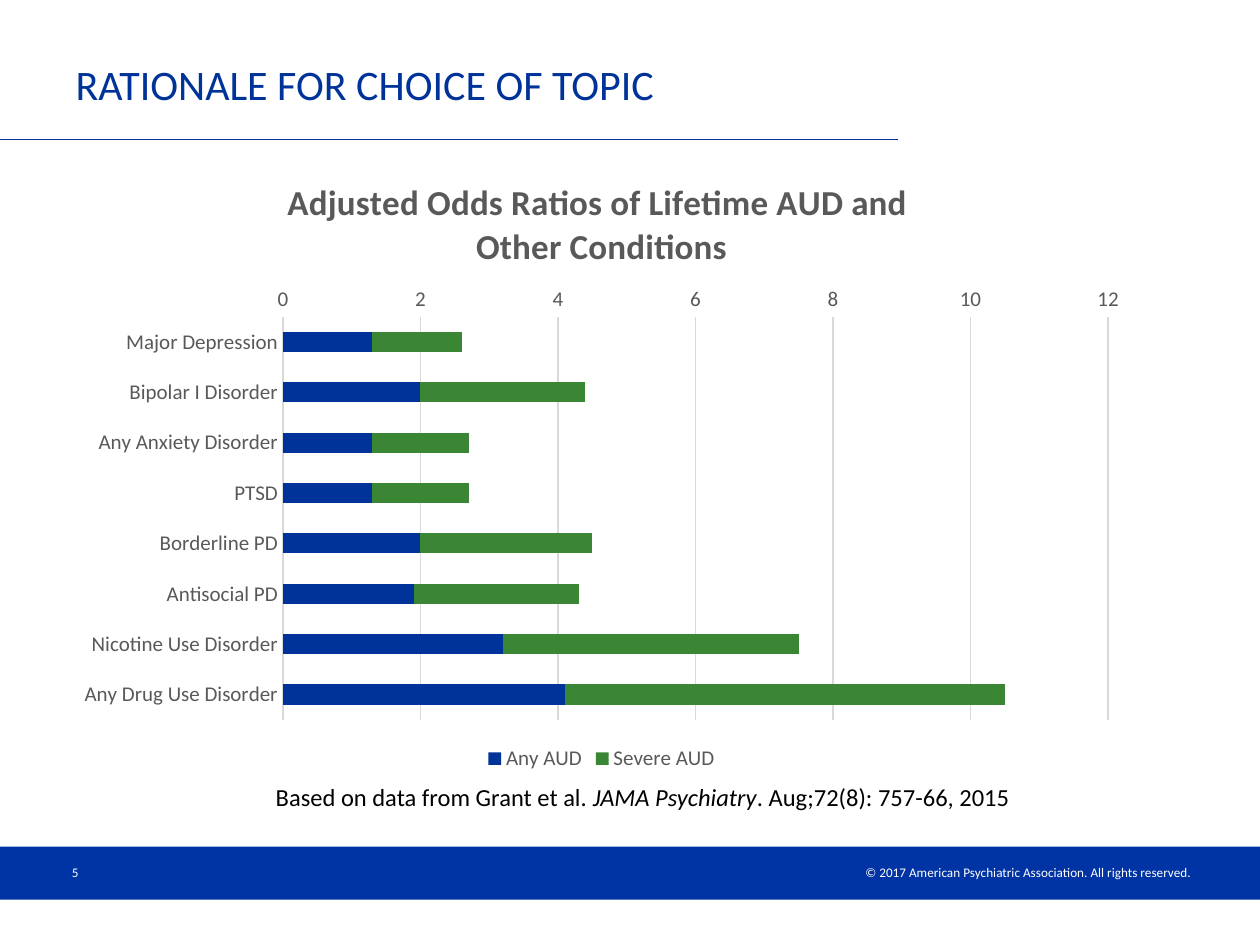
import pptx
import pptx.chart.data
import pptx.dml.color
import pptx.enum.chart
import pptx.enum.shapes
import pptx.enum.text
import pptx.oxml.ns
import pptx.util
import lxml.etree

Inches = pptx.util.Inches
Pt = pptx.util.Pt
RGBColor = pptx.dml.color.RGBColor
Align = pptx.enum.text.PP_ALIGN
Anchor = pptx.enum.text.MSO_ANCHOR

NAVY = RGBColor(0x00, 0x33, 0x99)
BAND_BLUE = RGBColor(0x00, 0x33, 0xA3)
GREEN = RGBColor(0x3B, 0x86, 0x34)
GRAY = RGBColor(0x59, 0x59, 0x59)
GRID_GRAY = RGBColor(0xD9, 0xD9, 0xD9)
BLACK = RGBColor(0, 0, 0)
WHITE = RGBColor(255, 255, 255)
FONT = "Calibri"

ODDS_RATIOS = {
    "Major Depression": (1.3, 1.3),
    "Bipolar I Disorder": (2, 2.4),
    "Any Anxiety Disorder": (1.3, 1.4),
    "PTSD": (1.3, 1.4),
    "Borderline PD": (2, 2.5),
    "Antisocial PD": (1.9, 2.4),
    "Nicotine Use Disorder": (3.2, 4.3),
    "Any Drug Use Disorder": (4.1, 6.4),
}
SEVERITIES = {"Any AUD": NAVY, "Severe AUD": GREEN}


class SlideBuilder:
    def __init__(self, slide):
        self.slide = slide

    def style(self, font, size, color, bold=None, italic=None):
        font.name = FONT
        font.size = Pt(size)
        font.color.rgb = color
        font.bold = bold
        font.italic = italic

    def box(self, left, top, width, height):
        return Inches(left), Inches(top), Inches(width), Inches(height)

    def title(self, text, *place):
        heading = self.slide.shapes.title
        heading.left, heading.top, heading.width, heading.height = self.box(*place)
        frame = heading.text_frame
        frame.text = text
        frame.vertical_anchor = Anchor.MIDDLE
        frame.paragraphs[0].alignment = Align.LEFT
        self.style(frame.paragraphs[0].runs[0].font, 24, NAVY)

    def band(self, color, *place):
        bar = self.slide.shapes.add_shape(
            pptx.enum.shapes.MSO_SHAPE.RECTANGLE, *self.box(*place))
        bar.shadow.inherit = False
        bar.fill.solid()
        bar.fill.fore_color.rgb = color
        bar.line.fill.background()

    def rule(self, left, right, top):
        line = self.slide.shapes.add_connector(
            pptx.enum.shapes.MSO_CONNECTOR.STRAIGHT,
            Inches(left), Inches(top), Inches(right), Inches(top))
        line.line.color.rgb = NAVY
        line.line.width = Pt(0.75)
        properties = line._element.spPr
        lxml.etree.SubElement(properties, pptx.oxml.ns.qn("a:effectLst"))

    def text(self, parts, size, color, *place, align=Align.LEFT,
             anchor=Anchor.MIDDLE, wrap=True):
        """Add one paragraph from (text, italic) parts."""
        frame = self.slide.shapes.add_textbox(*self.box(*place)).text_frame
        frame.word_wrap = wrap
        frame.vertical_anchor = anchor
        paragraph = frame.paragraphs[0]
        paragraph.alignment = align
        for words, italic in parts:
            run = paragraph.add_run()
            run.text = words
            self.style(run.font, size, color, italic=italic)
        return frame

    def stacked_bars(self, title, rows, series_colors, *place):
        data = pptx.chart.data.CategoryChartData()
        data.categories = list(rows)
        for name, values in zip(series_colors, zip(*rows.values())):
            data.add_series(name, values)
        chart = self.slide.shapes.add_chart(
            pptx.enum.chart.XL_CHART_TYPE.BAR_STACKED, *self.box(*place), data).chart
        self.style(chart.font, 10, BLACK)

        chart.has_title = True
        chart.chart_title.include_in_layout = False
        chart.chart_title.text_frame.text = title
        for paragraph in chart.chart_title.text_frame.paragraphs:
            self.style(paragraph.runs[0].font, 20, GRAY, bold=True)

        chart.has_legend = True
        chart.legend.position = pptx.enum.chart.XL_LEGEND_POSITION.BOTTOM
        chart.legend.include_in_layout = False
        self.style(chart.legend.font, 12, GRAY)

        for axis in (chart.category_axis, chart.value_axis):
            axis.major_tick_mark = pptx.enum.chart.XL_TICK_MARK.NONE
            axis.minor_tick_mark = pptx.enum.chart.XL_TICK_MARK.NONE
            self.style(axis.tick_labels.font, 12, GRAY)
        chart.category_axis.reverse_order = True
        chart.value_axis.format.line.fill.background()
        chart.value_axis.has_major_gridlines = True
        for line in (chart.category_axis.format.line,
                     chart.value_axis.major_gridlines.format.line):
            line.color.rgb = GRID_GRAY
            line.width = Pt(0.75)

        plot = chart.plots[0]
        plot.gap_width = 150
        plot.overlap = 100
        plot.vary_by_categories = False
        for series, color in zip(plot.series, series_colors.values()):
            series.format.fill.solid()
            series.format.fill.fore_color.rgb = color


def main():
    deck = pptx.Presentation()
    deck.slide_width = Inches(10)
    deck.slide_height = Inches(7.5)
    builder = SlideBuilder(deck.slides.add_slide(deck.slide_layouts[5]))

    builder.band(BAND_BLUE, 0, 6.72, 10, 0.42)
    builder.rule(0, 7.13, 1.11)
    builder.text([("© 2017 American Psychiatric Association. All rights reserved.", None)],
                 7.5, WHITE, 5.18, 6.81, 4.37, 0.23, align=Align.RIGHT)
    page_number = builder.text([("5", None)], 7.5, WHITE, 0.5, 6.72, 2.33, 0.4)
    page_number.margin_left = page_number.margin_right = Inches(0.07)
    page_number.margin_top = page_number.margin_bottom = Inches(0.04)

    builder.title("RATIONALE FOR CHOICE OF TOPIC", 0.5, 0.34, 6.63, 0.64)
    builder.stacked_bars(
        "Adjusted Odds Ratios of Lifetime AUD and \nOther Conditions",
        ODDS_RATIOS, SEVERITIES, 0.5, 1.24, 8.55, 4.92)
    builder.text([("Based on data from Grant et al. ", None),
                  ("JAMA Psychiatry", True),
                  (". Aug;72(8): 757-66, 2015", False)],
                 14, BLACK, 2.09, 6.16, 6.04, 0.34, anchor=Anchor.TOP, wrap=False)
    deck.save("out.pptx")


if __name__ == "__main__":
    main()
